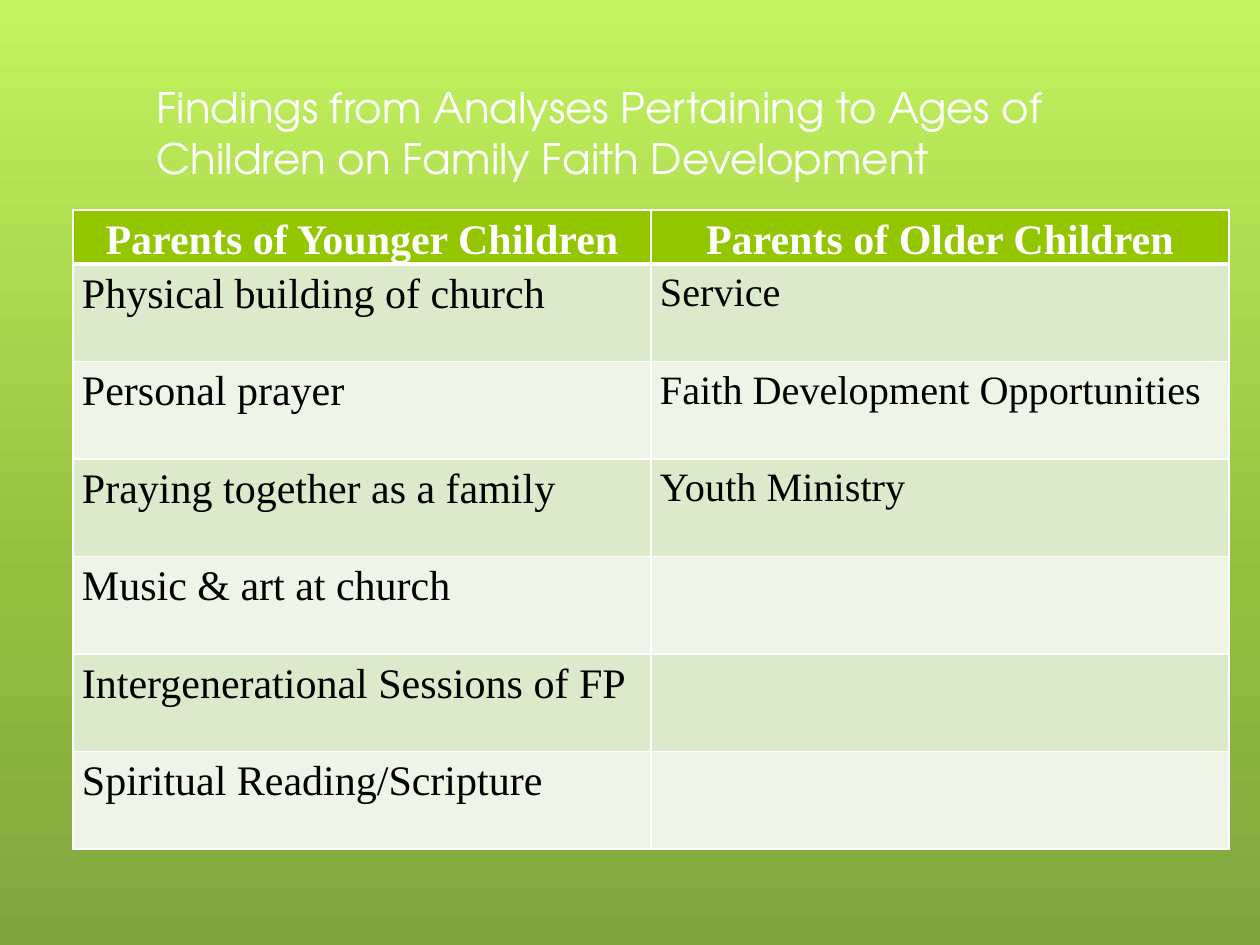
from dataclasses import dataclass
from itertools import zip_longest

from pptx import Presentation, util as u
from pptx.dml.color import RGBColor
from pptx.enum import text
from pptx.oxml import parse_xml
from pptx.oxml.ns import nsdecls

PX_PER_INCH = 126


@dataclass(frozen=True)
class Theme:
    background: tuple = ((0, "C3F35F"), (62, "93BF3F"), (100, "81A53E"))
    white: str = "FFFFFF"
    ink: str = "000000"
    header: str = "94C600"
    bands: tuple = ("DCEACC", "EEF5E7")
    title_font: str = "TeX Gyre Adventor"
    table_font: str = "Times New Roman"
    large: int = 24
    small: int = 23


def px(length):
    return u.Emu(length * u.Inches(1) // PX_PER_INCH)


def write(frame, words, *, font, size, color, bold=False,
          align=text.PP_ALIGN.LEFT, spacing=None, after=None):
    """Put one formatted paragraph into a text frame."""
    paragraph = frame.paragraphs[0]
    paragraph.alignment = align
    paragraph.line_spacing = spacing
    paragraph.space_after = after
    run = paragraph.add_run()
    run.text = words
    run.font.name = font
    run.font.size = u.Pt(size)
    run.font.bold = bold
    run.font.color.rgb = RGBColor.from_string(color)


class SlideBuilder:
    def __init__(self, slide, theme):
        self.slide = slide
        self.theme = theme

    def background(self):
        stops = "".join(
            f'<a:gs pos="{position * 1000}"><a:srgbClr val="{color}"/></a:gs>'
            for position, color in self.theme.background)
        self.slide.element.cSld.insert(0, parse_xml(
            f'<p:bg {nsdecls("p", "a")}><p:bgPr><a:gradFill rotWithShape="1">'
            f'<a:gsLst>{stops}</a:gsLst><a:lin ang="5400000" scaled="0"/>'
            '</a:gradFill><a:effectLst/></p:bgPr></p:bg>'))

    def title(self, words, left, top, width, height):
        shape = self.slide.shapes.title
        shape.left, shape.top = px(left), px(top)
        shape.width, shape.height = px(width), px(height)
        frame = shape.text_frame
        frame.word_wrap = True
        frame.auto_size = text.MSO_AUTO_SIZE.NONE
        frame.vertical_anchor = text.MSO_ANCHOR.BOTTOM
        write(frame, words, font=self.theme.title_font,
              size=self.theme.large, color=self.theme.white)

    def borders(self, cell, bottom):
        properties = cell._tc.get_or_add_tcPr()
        widths = {"lnL": 1, "lnR": 1, "lnT": 1, "lnB": bottom}
        for index, (tag, width) in enumerate(widths.items()):
            properties.insert(index, parse_xml(
                f'<a:{tag} {nsdecls("a")} w="{u.Pt(width)}"><a:solidFill>'
                f'<a:srgbClr val="{self.theme.white}"/></a:solidFill></a:{tag}>'))

    def cell(self, cell, words, fill, bottom=1, **style):
        cell.margin_left = cell.margin_right = px(9)
        cell.margin_top = cell.margin_bottom = 0
        cell.fill.solid()
        cell.fill.fore_color.rgb = RGBColor.from_string(fill)
        self.borders(cell, bottom)
        if words:
            write(cell.text_frame, words, font=self.theme.table_font,
                  spacing=1.15, after=u.Pt(10), **style)

    def table(self, headings, rows, left, top, width, height, header_height):
        theme = self.theme
        table = self.slide.shapes.add_table(
            len(rows) + 1, len(headings), px(left), px(top),
            px(width), px(height)).table
        table.horz_banding = False

        # Header row
        table.rows[0].height = px(header_height)
        for column, words in enumerate(headings):
            self.cell(table.cell(0, column), words, theme.header, bottom=3,
                      size=theme.large, color=theme.white, bold=True,
                      align=text.PP_ALIGN.CENTER)

        # Banded body rows share the remaining height
        sizes = (theme.large, theme.small)
        for number, row in enumerate(rows, start=1):
            table.rows[number].height = px(height - header_height) // len(rows)
            band = theme.bands[(number - 1) % 2]
            for column, words in enumerate(row):
                self.cell(table.cell(number, column), words, band,
                          size=sizes[column], color=theme.ink)


def main():
    presentation = Presentation()
    presentation.slide_width, presentation.slide_height = px(1260), px(945)
    slide = presentation.slides.add_slide(presentation.slide_layouts[5])
    builder = SlideBuilder(slide, Theme())

    # Background and title
    builder.background()
    builder.title("Findings from Analyses Pertaining to Ages of Children "
                  "on Family Faith Development", 144, 63, 968, 126)

    # Findings by age of children
    younger = ["Physical building of church", "Personal prayer",
               "Praying together as a family", "Music & art at church",
               "Intergenerational Sessions of FP", "Spiritual Reading/Scripture"]
    older = ["Service", "Faith Development Opportunities", "Youth Ministry"]
    builder.table(["Parents of Younger Children", "Parents of Older Children"],
                  list(zip_longest(younger, older)),
                  73, 210, 1156, 639, header_height=54)

    presentation.save("out.pptx")


if __name__ == "__main__":
    main()
